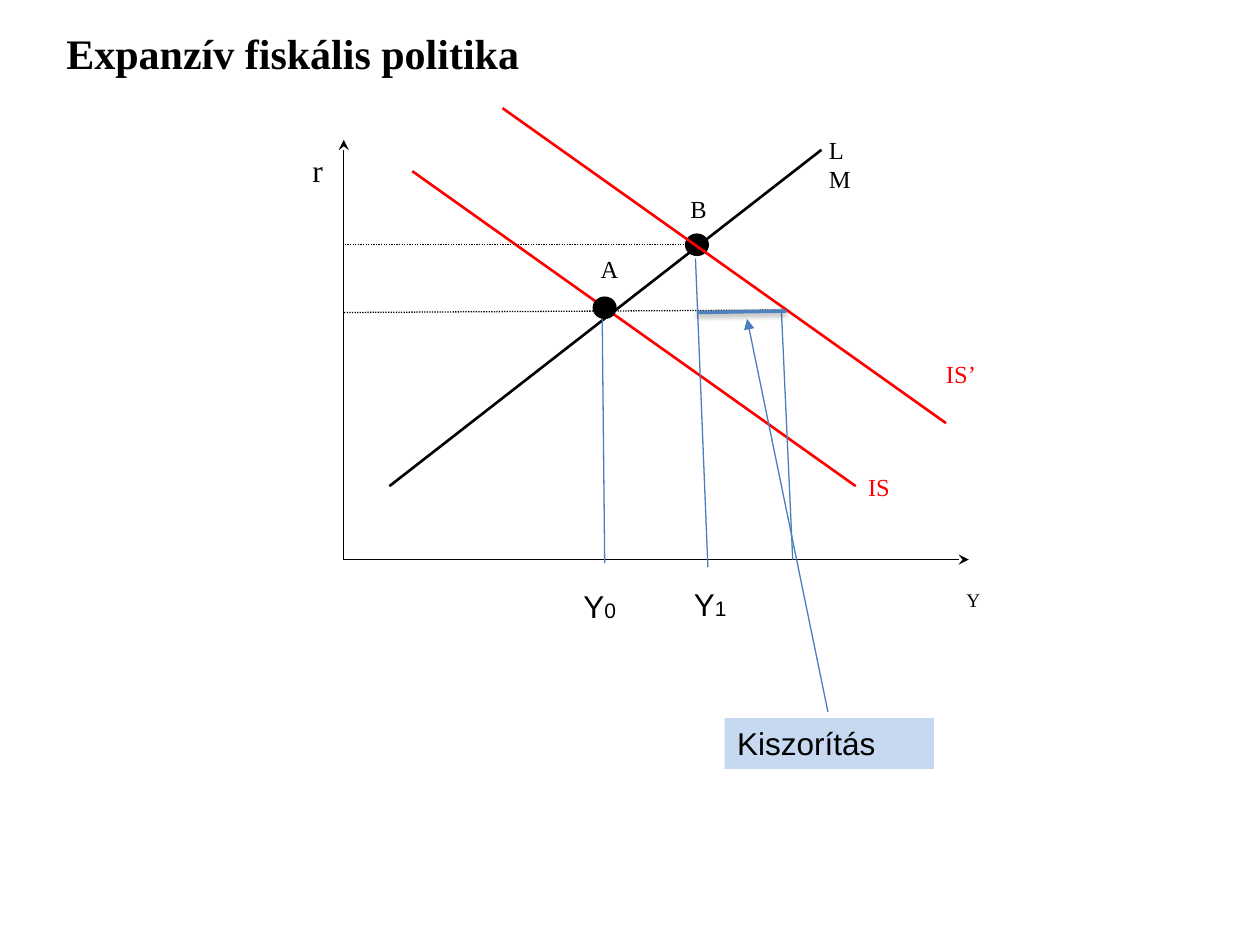
"""Draw the IS-LM diagram of an expansionary fiscal policy."""
from lxml import etree
from pptx import Presentation
from pptx import util as u
from pptx.dml.color import RGBColor
from pptx.enum import dml, shapes, text
from pptx.oxml import ns

BLACK = RGBColor(0, 0, 0)
RED = RGBColor(0xFF, 0, 0)
BLUE = RGBColor(0x4B, 0x7E, 0xBC)
THICK = RGBColor(0x4F, 0x81, 0xBD)
PALE = RGBColor(0xC6, 0xD9, 0xF1)
SERIF, SANS = "Times New Roman", "Arial"

ORIGIN = (6.93, 11.28)
AXES = [(6.93, 2.82), (19.53, 11.28)]
IS = (8.31, 3.45, 17.25, 9.8)
SHIFT = (1.82, -1.27)
LM = (7.85, 9.8, 16.56, 3.02)
LEVELS = [(15.7, 6.25, 6.93, 6.3), (14.05, 4.93, 6.93, 4.93)]
DOTS = [(13.82, 4.72), (11.96, 5.99)]
DROPS = [(12.14, 6.43, 12.19, 11.35), (14.02, 5.21, 14.27, 11.43),
         (15.75, 6.22, 15.98, 11.28)]
GAP = (14.05, 6.3, 15.85, 6.27)
ARROW = (16.69, 14.35, 15.06, 6.43)
BOX = (14.61, 14.48, 4.22, 1.02)

LABELS = [
    ((1.09, 0.43, 9.73, 1.3), [("Expanzív fiskális politika", 24)], SERIF, BLACK, True),
    ((17.25, 9.4, 0.94, 0.84), [("IS", 14)], SERIF, RED, False),
    ((18.82, 7.11, 1.19, 0.86), [("IS’", 14)], SERIF, RED, False),
    ((16.46, 2.59, 1.24, 0.84), [("LM", 14)], SERIF, BLACK, False),
    ((11.86, 5, 0.86, 0.84), [("A", 14)], SERIF, BLACK, False),
    ((13.67, 3.78, 0.84, 0.84), [("B", 14)], SERIF, BLACK, False),
    ((19.23, 11.73, 0.79, 0.71), [("Y", 11)], SERIF, BLACK, False),
    ((6.05, 2.92, 0.74, 1.02), [("r", 18)], SERIF, BLACK, False),
    ((11.51, 11.71, 1.5, 1.04), [("Y", 18), ("0", 12)], SANS, BLACK, False),
    ((13.74, 11.66, 1.5, 1.04), [("Y", 18), ("1", 12)], SANS, BLACK, False),
]


def cms(vals):
    return [u.Cm(v) for v in vals]


def line(slide, ends, color, width=0.75, head=None, dash=None):
    link = slide.shapes.add_connector(shapes.MSO_CONNECTOR.STRAIGHT, *cms(ends))
    link.line.color.rgb = color
    link.line.width = u.Pt(width)
    if dash:
        link.line.dash_style = dash
    if head:
        etree.SubElement(link.line._get_or_add_ln(), ns.qn("a:tailEnd"), type=head)
    return etree.SubElement(link._element.spPr, ns.qn("a:effectLst"))


def shade(effects):
    cast = etree.SubElement(effects, ns.qn("a:outerShdw"), blurRad="40000",
                            dist="20000", dir="5400000", rotWithShape="0")
    tone = etree.SubElement(cast, ns.qn("a:srgbClr"), val=str(BLACK))
    etree.SubElement(tone, ns.qn("a:alpha"), val="38000")


def write(frame, runs, font, color, bold=False):
    para = frame.paragraphs[0]
    para.alignment = text.PP_ALIGN.LEFT
    for word, size in runs:
        run = para.add_run()
        run.text = word
        run.font.name = font
        run.font.size = u.Pt(size)
        run.font.bold = bold
        run.font.color.rgb = color


def solid(slide, kind, place, fill):
    shape = slide.shapes.add_shape(kind, *cms(place))
    shape.shadow.inherit = False
    shape.fill.solid()
    shape.fill.fore_color.rgb = fill
    shape.line.fill.background()
    return shape


def main():
    deck = Presentation()
    deck.slide_width, deck.slide_height = cms((25.4, 19.05))
    slide = deck.slides.add_slide(deck.slide_layouts[6])

    for tip in AXES:
        line(slide, ORIGIN + tip, BLACK, head="stealth")
    line(slide, IS, RED, 1.5)
    line(slide, LM, BLACK, 1.5)
    for ends in LEVELS:
        line(slide, ends, BLACK, dash=dml.MSO_LINE.ROUND_DOT)
    for spot in DOTS:
        dot = solid(slide, shapes.MSO_SHAPE.OVAL, spot + (0.46, 0.43), BLACK)
        dot.line.color.rgb = BLACK
        dot.line.width = u.Pt(0.75)
    line(slide, [a + b for a, b in zip(IS, SHIFT * 2)], RED, 1.5)

    for place, runs, font, color, bold in LABELS:
        frame = slide.shapes.add_textbox(*cms(place)).text_frame
        frame.word_wrap = font == SANS
        write(frame, runs, font, color, bold)

    for ends in DROPS:
        line(slide, ends, BLUE)
    shade(line(slide, GAP, THICK, 2))
    line(slide, ARROW, BLUE, head="triangle")
    frame = solid(slide, shapes.MSO_SHAPE.RECTANGLE, BOX, PALE).text_frame
    frame.word_wrap = True
    frame.vertical_anchor = text.MSO_ANCHOR.TOP
    write(frame, [("Kiszorítás", 18)], SANS, BLACK)
    deck.save("out.pptx")


if __name__ == "__main__":
    main()
